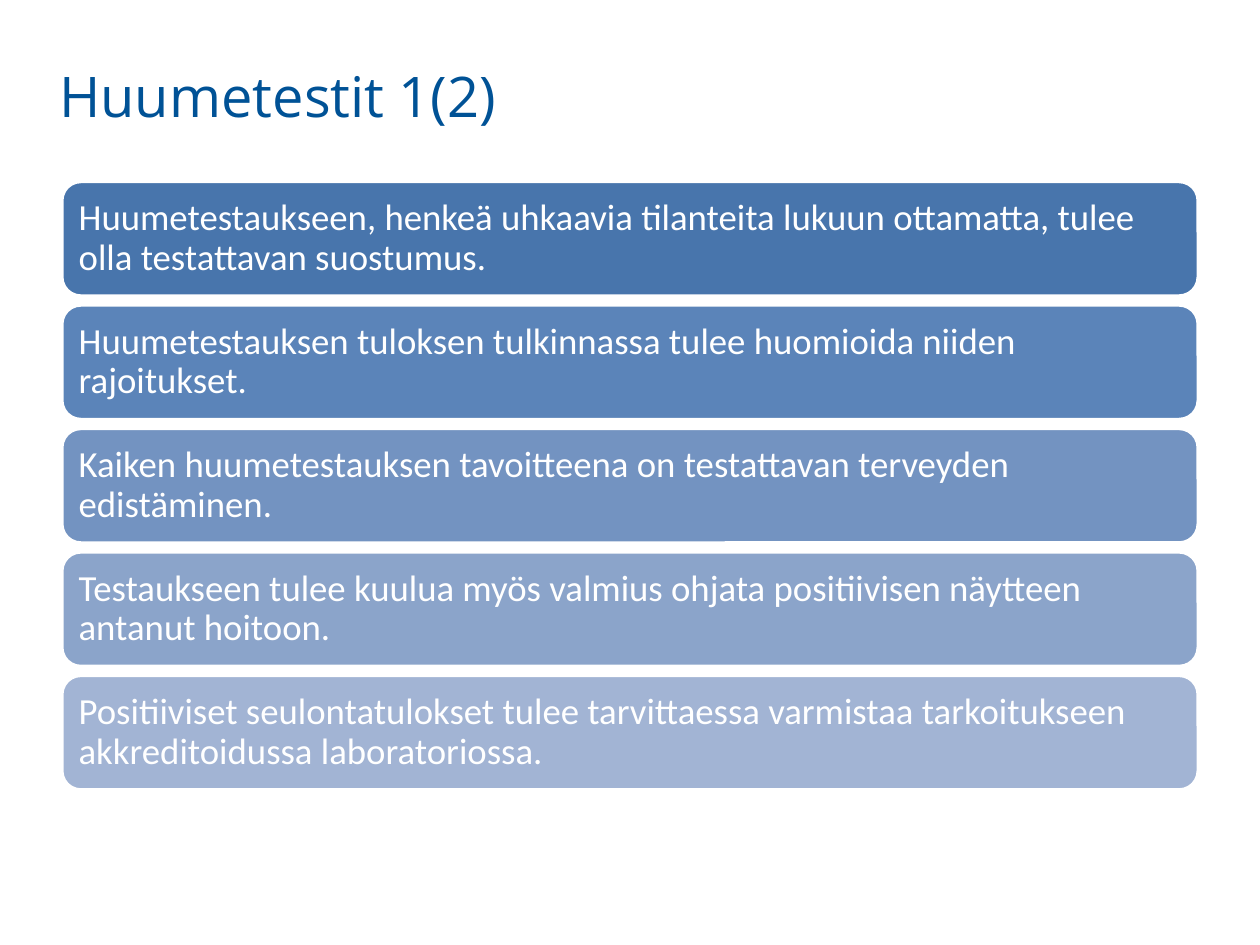
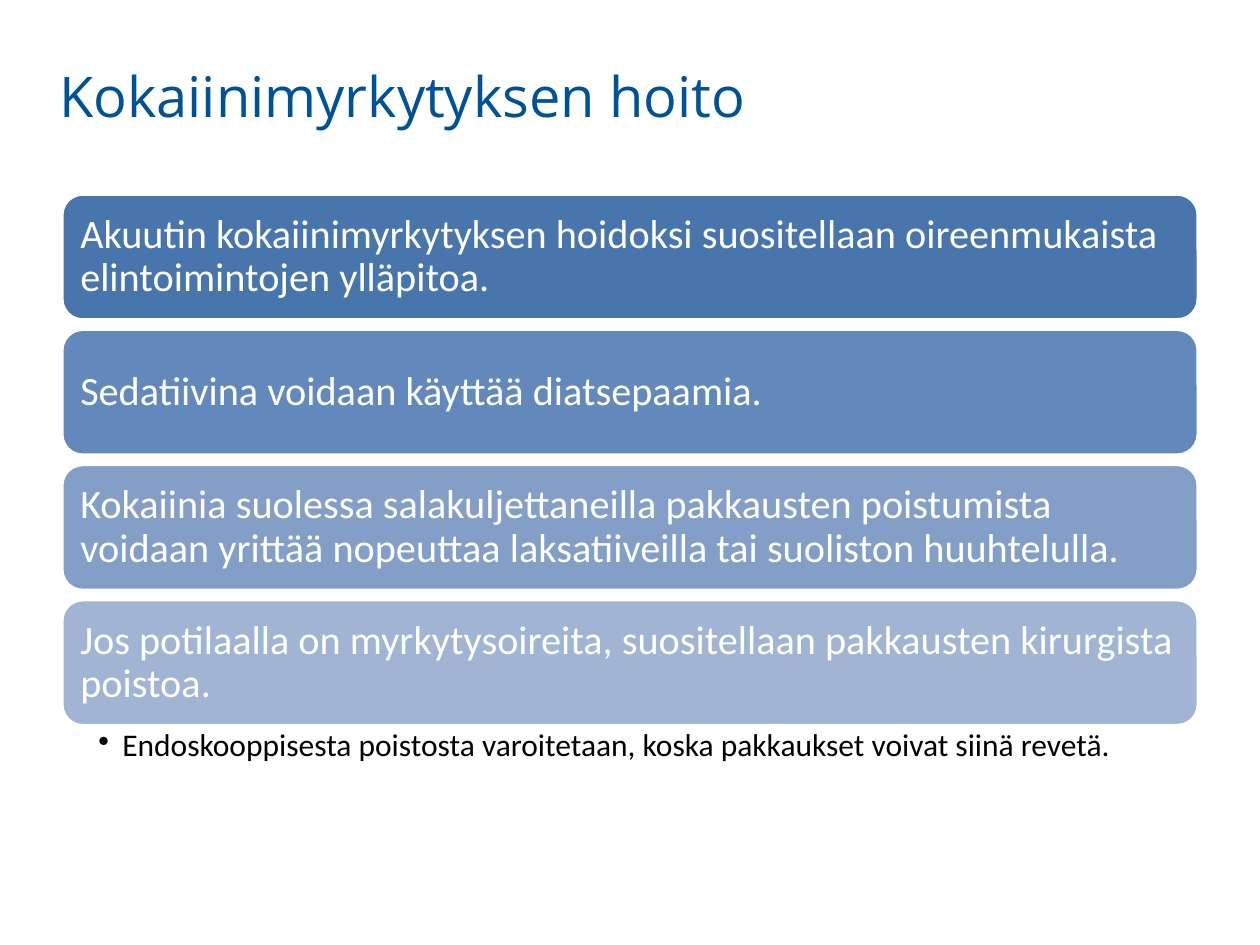
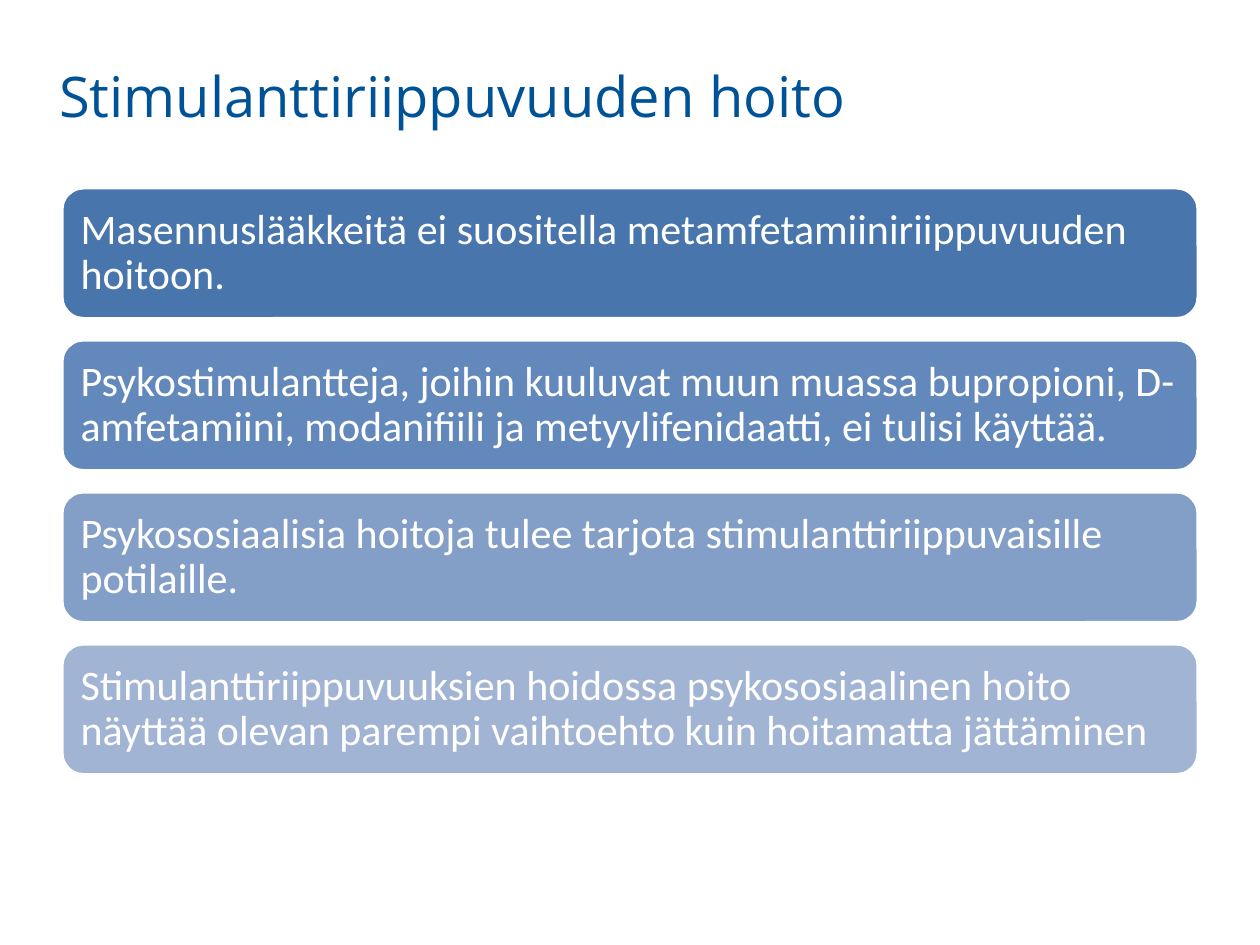
from lxml import etree
from pptx import Presentation
from pptx.dml.color import RGBColor
from pptx.enum import shapes, text
from pptx.oxml.ns import qn
from pptx.util import Inches, Pt

WHITE, BLACK, TITLE_BLUE = "FFFFFF", "000000", "005296"
BODY_FONT, TITLE_FONT = "Calibri", "Open Sans"
SHADES = {
    4: ["4875AC", "6389BC", "839EC7", "A2B4D4"],
    5: ["4875AC", "5B84B9", "7393C1", "8BA4CA", "A2B4D4"],
}
LEFT, WIDTH = 0.49, 9.02

# Tops of the first and last bar, bar height, text inset and text size vary by slide.
SLIDES = [
    dict(
        title="Huumetestit 1(2)",
        first=1.44, last=5.36, height=0.91, inset=0.09, size=21,
        bars=[
            "Huumetestaukseen, henkeä uhkaavia tilanteita lukuun ottamatta, tulee olla testattavan suostumus.",
            "Huumetestauksen tuloksen tulkinnassa tulee huomioida niiden rajoitukset.",
            "Kaiken huumetestauksen tavoitteena on testattavan terveyden edistäminen.",
            "Testaukseen tulee kuulua myös valmius ohjata positiivisen näytteen antanut hoitoon.",
            "Positiiviset seulontatulokset tulee tarvittaessa varmistaa tarkoitukseen akkreditoidussa laboratoriossa.",
        ],
    ),
    dict(
        title="Kokaiinimyrkytyksen hoito",
        first=1.54, last=4.76, height=1, inset=0.1, size=23,
        bars=[
            "Akuutin kokaiinimyrkytyksen hoidoksi suositellaan oireenmukaista elintoimintojen ylläpitoa.",
            "Sedatiivina voidaan käyttää diatsepaamia.",
            "Kokaiinia suolessa salakuljettaneilla pakkausten poistumista voidaan yrittää nopeuttaa "
            "laksatiiveilla tai suoliston huuhtelulla.",
            "Jos potilaalla on myrkytysoireita, suositellaan pakkausten kirurgista poistoa.",
        ],
        bullet="Endoskooppisesta poistosta varoitetaan, koska pakkaukset voivat siinä revetä.",
    ),
    dict(
        title="Stimulanttiriippuvuuden hoito",
        first=1.49, last=5.11, height=1.04, inset=0.1, size=24,
        bars=[
            "Masennuslääkkeitä ei suositella metamfetamiiniriippuvuuden hoitoon.",
            "Psykostimulantteja, joihin kuuluvat muun muassa bupropioni, D-amfetamiini, modanifiili ja "
            "metyylifenidaatti, ei tulisi käyttää.",
            "Psykososiaalisia hoitoja tulee tarjota stimulanttiriippuvaisille potilaille.",
            "Stimulanttiriippuvuuksien hoidossa psykososiaalinen hoito näyttää olevan parempi vaihtoehto "
            "kuin hoitamatta jättäminen",
        ],
    ),
]


def rgb(value):
    return RGBColor.from_string(value)


def write(shape, content, size, color, insets, anchor, font=BODY_FONT, spacing=0.9):
    """Fill a shape with one left-aligned paragraph; insets run left, top, right, bottom."""
    tf = shape.text_frame
    tf.text = content
    tf.word_wrap = True
    tf.auto_size = text.MSO_AUTO_SIZE.NONE
    tf.vertical_anchor = anchor
    tf.margin_left, tf.margin_top, tf.margin_right, tf.margin_bottom = map(Inches, insets)
    p = tf.paragraphs[0]
    p.alignment = text.PP_ALIGN.LEFT
    p.line_spacing = spacing
    f = p.runs[0].font
    f.name, f.size, f.color.rgb = font, Pt(size), rgb(color)
    return p


def add_title(s, content):
    sp = s.shapes.title
    sp.left, sp.top, sp.width, sp.height = map(Inches, (0.37, 0.44, 9.02, 1.26))
    write(sp, content, 32, TITLE_BLUE, (0.1, 0.05, 0.1, 0.05),
          text.MSO_ANCHOR.TOP, TITLE_FONT, 1.0)


def add_bar(s, content, top, color, height, inset, size):
    sp = s.shapes.add_shape(shapes.MSO_SHAPE.ROUNDED_RECTANGLE,
                            *map(Inches, (LEFT, top, WIDTH, height)))
    sp.shadow.inherit = False
    sp.fill.solid()
    sp.fill.fore_color.rgb = rgb(color)
    sp.line.color.rgb = rgb(WHITE)
    sp.line.width = Pt(2)
    write(sp, content, size, WHITE, [inset] * 4, text.MSO_ANCHOR.MIDDLE)


def add_bullet(s, content, top):
    box = s.shapes.add_textbox(*map(Inches, (LEFT, top, WIDTH, 0.42)))
    p = write(box, content, 18, BLACK, (0.29, 0.03, 0.14, 0.03), text.MSO_ANCHOR.TOP)
    pPr = p._p.get_or_add_pPr()
    pPr.set("marL", str(Inches(0.19)))
    pPr.set("indent", str(-Inches(0.19)))
    etree.SubElement(pPr, qn("a:buChar")).set("char", "•")


def main():
    prs = Presentation()
    prs.slide_width, prs.slide_height = Inches(10), Inches(7.5)
    for spec_ in SLIDES:
        s = prs.slides.add_slide(prs.slide_layouts[5])
        add_title(s, spec_["title"])
        bars, first, last = spec_["bars"], spec_["first"], spec_["last"]
        step = (last - first) / (len(bars) - 1)
        for i, (content, color) in enumerate(zip(bars, SHADES[len(bars)])):
            add_bar(s, content, first + i * step, color,
                    spec_["height"], spec_["inset"], spec_["size"])
        if "bullet" in spec_:
            add_bullet(s, spec_["bullet"], last + spec_["height"])
    prs.save("out.pptx")


if __name__ == "__main__":
    main()
